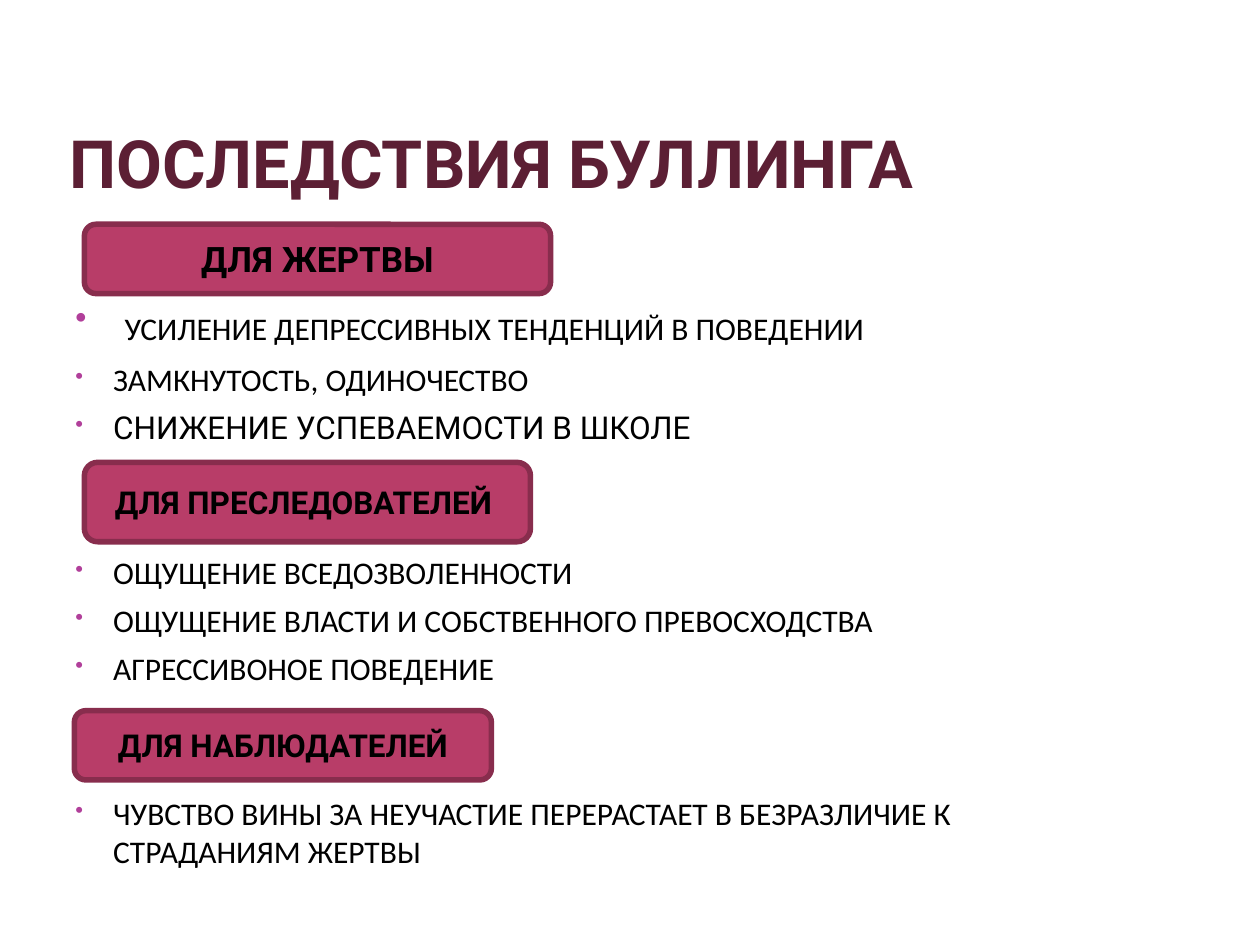
from lxml import etree
from pptx import Presentation
from pptx.dml.color import RGBColor
from pptx.enum.shapes import MSO_SHAPE
from pptx.enum.text import MSO_ANCHOR, PP_ALIGN
from pptx.oxml.ns import qn
from pptx.util import Inches, Pt

ROUNDED = MSO_SHAPE.ROUNDED_RECTANGLE
BOTTOM, MIDDLE, TOP = MSO_ANCHOR.BOTTOM, MSO_ANCHOR.MIDDLE, MSO_ANCHOR.TOP
CENTER = PP_ALIGN.CENTER
COLUMNS, ROWS = 100, 75
COLORS = {
    "title": "5C1F34",
    "text": "000000",
    "bullet": "B13F9A",
    "label": "B83D68",
    "border": "882D4D",
}
HEADING_FONT, BODY_FONT = "Roboto", "Calibri"
LABELS = [
    ("ДЛЯ ЖЕРТВЫ", (6.7, 17.8, 37, 5.5), 20),
    ("ДЛЯ ПРЕСЛЕДОВАТЕЛЕЙ ", (6.7, 36.7, 35.4, 6.3), 18),
    ("ДЛЯ НАБЛЮДАТЕЛЕЙ", (5.9, 56.4, 33.1, 5.5), 18),
]
SECTIONS = [
    [
        ("УСИЛЕНИЕ ДЕПРЕССИВНЫХ ТЕНДЕНЦИЙ В ПОВЕДЕНИИ", BODY_FONT),
        ("ЗАМКНУТОСТЬ, ОДИНОЧЕСТВО", BODY_FONT),
        ("СНИЖЕНИЕ УСПЕВАЕМОСТИ В ШКОЛЕ", HEADING_FONT),
    ],
    [
        ("ОЩУЩЕНИЕ ВСЕДОЗВОЛЕННОСТИ", BODY_FONT),
        ("ОЩУЩЕНИЕ ВЛАСТИ И СОБСТВЕННОГО ПРЕВОСХОДСТВА", BODY_FONT),
        ("АГРЕССИВОНОЕ ПОВЕДЕНИЕ", BODY_FONT),
    ],
    [
        (
            "ЧУВСТВО ВИНЫ ЗА НЕУЧАСТИЕ ПЕРЕРАСТАЕТ В БЕЗРАЗЛИЧИЕ К СТРАДАНИЯМ ЖЕРТВЫ",
            BODY_FONT,
        ),
    ],
]
BULLET_GAP, SECTION_GAP = 6, 61


class SlideBuilder:
    """Draws styled elements on a slide, placed by grid columns and rows."""

    def __init__(self, presentation):
        self.slide = presentation.slides.add_slide(presentation.slide_layouts[6])
        self.column = presentation.slide_width / COLUMNS
        self.row = presentation.slide_height / ROWS

    def place(self, area):
        left, top, width, height = area
        return (
            round(left * self.column),
            round(top * self.row),
            round(width * self.column),
            round(height * self.row),
        )

    def style(self, font, name, size, color, bold=False):
        font.name = name
        font.size = Pt(size)
        font.bold = bold
        font.color.rgb = RGBColor.from_string(COLORS[color])

    def text_frame(self, area, anchor):
        frame = self.slide.shapes.add_textbox(*self.place(area)).text_frame
        frame.word_wrap = True
        frame.vertical_anchor = anchor
        return frame

    def title(self, text, area):
        frame = self.text_frame(area, BOTTOM)
        frame.margin_left = frame.margin_right = Inches(0.05)
        frame.margin_top = frame.margin_bottom = 0
        paragraph = frame.paragraphs[0]
        paragraph.text = text
        self.style(paragraph.font, HEADING_FONT, 38, "title", bold=True)

    def label(self, text, area, size):
        shape = self.slide.shapes.add_shape(ROUNDED, *self.place(area))
        shape.shadow.inherit = False
        shape.fill.solid()
        shape.fill.fore_color.rgb = RGBColor.from_string(COLORS["label"])
        shape.line.color.rgb = RGBColor.from_string(COLORS["border"])
        shape.line.width = Pt(3.15)
        shape.text_frame.vertical_anchor = MIDDLE
        paragraph = shape.text_frame.paragraphs[0]
        paragraph.text = text
        paragraph.alignment = CENTER
        self.style(paragraph.font, HEADING_FONT, size, "text", bold=True)

    def add_bullet(self, paragraph):
        properties = paragraph._p.get_or_add_pPr()
        properties.set("marL", str(Inches(0.3)))
        properties.set("indent", str(-Inches(0.3)))
        color = etree.SubElement(properties, qn("a:buClr"))
        etree.SubElement(color, qn("a:srgbClr"), val=COLORS["bullet"])
        etree.SubElement(properties, qn("a:buSzPct"), val="73000")
        etree.SubElement(properties, qn("a:buChar"), char="•")

    def bullets(self, sections, area):
        frame = self.text_frame(area, TOP)
        for section_index, section in enumerate(sections):
            for index, (text, font_name) in enumerate(section):
                first = section_index == index == 0
                paragraph = frame.paragraphs[0] if first else frame.add_paragraph()
                if not first:
                    paragraph.space_before = Pt(BULLET_GAP if index else SECTION_GAP)
                self.add_bullet(paragraph)
                if first:
                    lead = paragraph.add_run()
                    lead.text = " "
                    self.style(lead.font, HEADING_FONT, 26, "text")
                run = paragraph.add_run()
                run.text = text
                font = run.font if first else paragraph.font
                self.style(font, font_name, 18, "text")


def main():
    presentation = Presentation()
    presentation.slide_width = Inches(10)
    presentation.slide_height = Inches(7.5)
    builder = SlideBuilder(presentation)
    builder.title("ПОСЛЕДСТВИЯ БУЛЛИНГА", (5, 3.5, 79.2, 12.5))
    builder.bullets(SECTIONS, (5, 22.9, 79.2, 47.7))
    for text, area, size in LABELS:
        builder.label(text, area, size)
    presentation.save("out.pptx")


if __name__ == "__main__":
    main()
